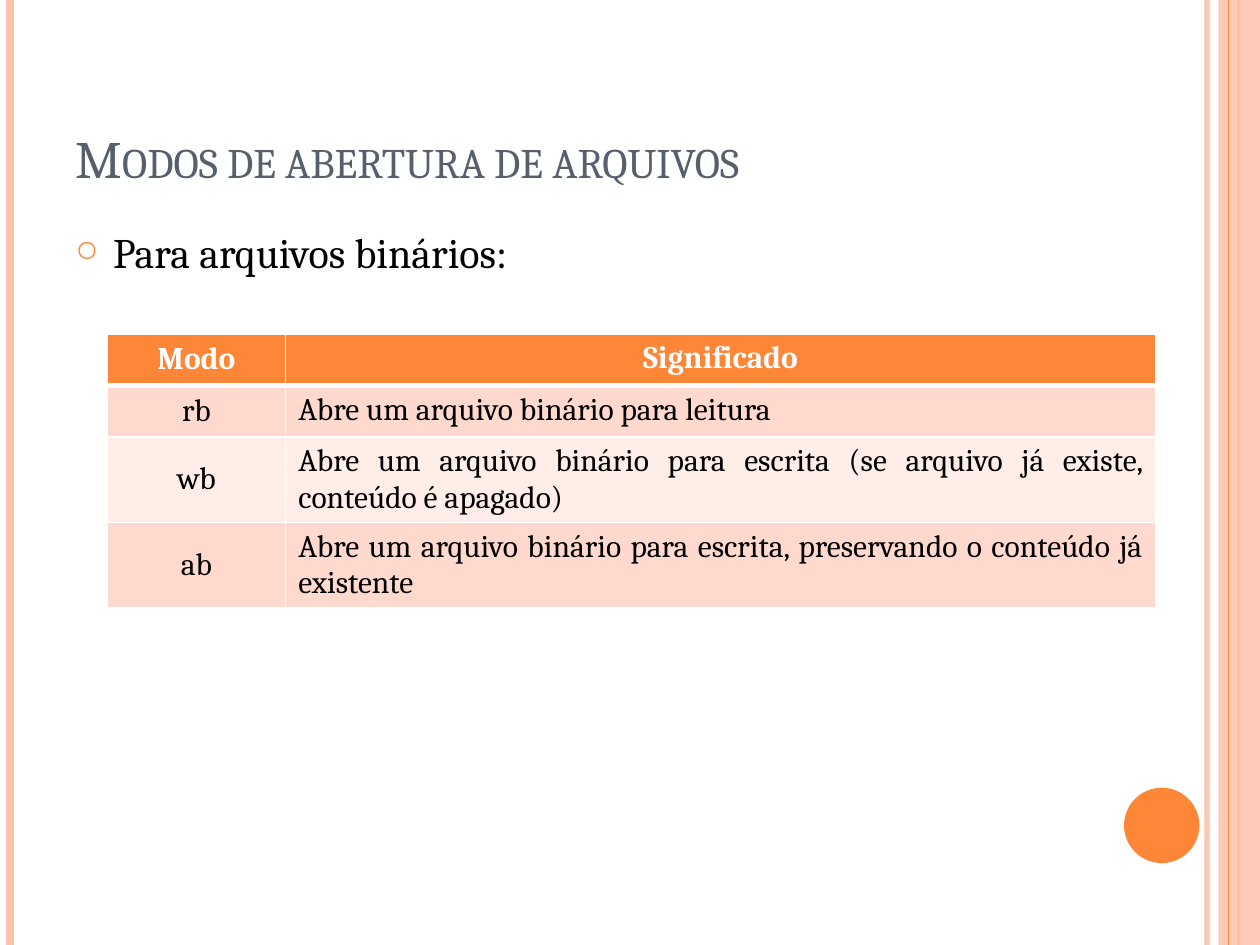
import pptx
import pptx.util
import pptx.dml.color
import pptx.enum.shapes
import pptx.enum.text
import pptx.oxml
import pptx.oxml.ns

Cm, Pt = pptx.util.Cm, pptx.util.Pt
Shape = pptx.enum.shapes.MSO_SHAPE
Anchor = pptx.enum.text.MSO_ANCHOR
Align = pptx.enum.text.PP_ALIGN
qn = pptx.oxml.ns.qn

TITLE = "Modos de abertura de arquivos"
LEAD = "Para arquivos binários:"
ROWS = [
    ("Modo", "Significado"),
    ("rb", "Abre um arquivo binário para leitura"),
    ("wb", "Abre um arquivo binário para escrita (se arquivo já existe, conteúdo é apagado)"),
    ("ab", "Abre um arquivo binário para escrita, preservando o conteúdo já existente"),
]
HUES = {"orange": "FE8637", "peach": "FEC3AE", "slate": "575F6D", "white": "FFFFFF",
        "black": "000000", "dark": "FFD9CE", "light": "FFEDE8"}
FONT = "Cambria"
WIDE, HIGH = 25.4, 19.05
COLS = (3.6, 17.53)
TALL = (1.04, 1.04, 1.71, 1.71)
BARS = [(24.33, "peach", 3, 93), (0.2, "peach", 4.5, 100), (24.97, "orange", 1.5, 100)]


def rgb(hue):
    return pptx.dml.color.RGBColor.from_string(HUES[hue])


def add_xml(tag, body="", **attrs):
    text = " ".join(f'{key}="{val}"' for key, val in attrs.items())
    space = pptx.oxml.ns.nsdecls("a")
    return pptx.oxml.parse_xml(f"<a:{tag} {space} {text}>{body}</a:{tag}>")


def fade(elem, alpha):
    color = next(elem.iter(qn("a:srgbClr")))
    color.append(add_xml("alpha", val=alpha * 1000))


def style(par, size, hue, bold=False):
    font = par.font
    font.name, font.size, font.bold = FONT, Pt(size), bold
    font.color.rgb = rgb(hue)


def add_bar(slide, left, hue, width, alpha=100):
    bar = slide.shapes.add_connector(
        pptx.enum.shapes.MSO_CONNECTOR.STRAIGHT, Cm(left), 0, Cm(left), Cm(HIGH))
    bar.line.color.rgb = rgb(hue)
    bar.line.width = Pt(width)
    props = bar._element.spPr
    if alpha < 100:
        fade(props, alpha)
    props.append(add_xml("effectLst"))


def add_block(slide, kind, hue, *box):
    block = slide.shapes.add_shape(kind, *map(Cm, box))
    block.shadow.inherit = False
    block.fill.solid()
    block.fill.fore_color.rgb = rgb(hue)
    block.line.fill.background()
    return block


def add_frame(slide):
    for bar in BARS:
        add_bar(slide, *bar)
    band = add_block(slide, Shape.RECTANGLE, "peach", 24.56, 0, WIDE - 24.56, HIGH)
    fade(band._element.spPr, 87)
    add_bar(slide, 24.77, "orange", 0.75)
    add_block(slide, Shape.OVAL, "orange", 22.66, 15.88, 1.52, 1.52)


def set_title(slide):
    title = slide.shapes.title
    title.left, title.top, title.width, title.height = map(Cm, (1.27, 0.76, 20.75, 3.18))
    frame = title.text_frame
    frame.text = TITLE
    frame.vertical_anchor = Anchor.BOTTOM
    par = frame.paragraphs[0]
    par.alignment = Align.LEFT
    style(par, 30, "slate")
    par.runs[0]._r.get_or_add_rPr().set("cap", "small")


def add_lead(slide):
    frame = slide.shapes.add_textbox(*map(Cm, (1.27, 4.45, 20.75, 13.54))).text_frame
    frame.word_wrap = True
    par = frame.paragraphs[0]
    par.text = LEAD
    par.space_before = Pt(6)
    style(par, 24, "black")
    props = par._p.get_or_add_pPr()
    props.set("marL", str(Cm(0.76)))
    props.set("indent", str(Cm(-0.76)))
    marks = [add_xml("buClr", f'<a:srgbClr val="{HUES["orange"]}"/>'),
             add_xml("buSzPct", val=70000), add_xml("buChar", char="○")]
    for mark in marks:
        props.find(qn("a:defRPr")).addprevious(mark)


def set_edges(cell, head, below):
    props = cell._tc.get_or_add_tcPr()
    fill = f'<a:solidFill><a:srgbClr val="{HUES["white"]}"/></a:solidFill>'
    widths = {"lnL": 1, "lnR": 1, "lnT": 3 if below else 1, "lnB": 3 if head else 1}
    for spot, (tag, width) in enumerate(widths.items()):
        props.insert(spot, add_xml(tag, fill, w=Pt(width)))


def add_modes(slide):
    table = slide.shapes.add_table(
        len(ROWS), len(COLS), Cm(2.16), Cm(6.73), Cm(sum(COLS)), Cm(sum(TALL))).table
    for col, width in zip(table.columns, COLS):
        col.width = Cm(width)
    for i, (row, height) in enumerate(zip(ROWS, TALL)):
        table.rows[i].height = Cm(height)
        head = i == 0
        hue = "orange" if head else "dark" if i % 2 else "light"
        for j, text in enumerate(row):
            cell = table.cell(i, j)
            cell.text = text
            cell.vertical_anchor = Anchor.TOP if j else Anchor.MIDDLE
            cell.fill.solid()
            cell.fill.fore_color.rgb = rgb(hue)
            par = cell.text_frame.paragraphs[0]
            par.alignment = Align.JUSTIFY if j and not head else Align.CENTER
            style(par, 18, "white" if head else "black", head)
            set_edges(cell, head, i == 1)


def main():
    deck = pptx.Presentation()
    deck.slide_width, deck.slide_height = Cm(WIDE), Cm(HIGH)
    slide = deck.slides.add_slide(deck.slide_layouts[5])
    add_frame(slide)
    set_title(slide)
    add_modes(slide)
    add_lead(slide)
    deck.save("out.pptx")


if __name__ == "__main__":
    main()
